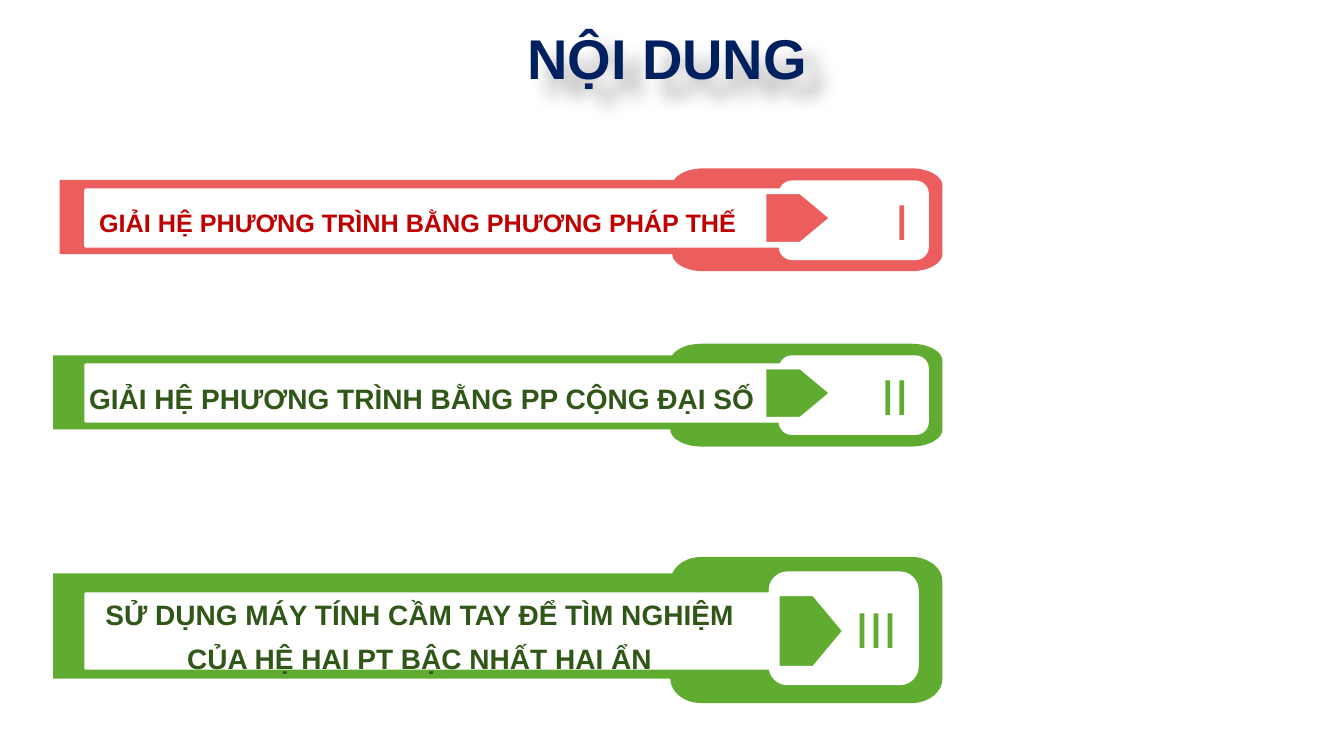
import itertools
from dataclasses import dataclass

import lxml.etree
import pptx
import pptx.dml.color
import pptx.enum.shapes
import pptx.enum.text
import pptx.oxml
import pptx.oxml.ns
import pptx.shapes.autoshape
import pptx.shapes.group
import pptx.slide
import pptx.text.text
import pptx.util

RGBColor = pptx.dml.color.RGBColor
Preset = pptx.enum.shapes.MSO_SHAPE
Align = pptx.enum.text.PP_ALIGN
Anchor = pptx.enum.text.MSO_ANCHOR
Point = tuple[float, float]

NAVY = RGBColor(0x00, 0x20, 0x60)
CORAL = RGBColor(0xEB, 0x5E, 0x5D)
CRIMSON = RGBColor(0xC0, 0x00, 0x00)
GREEN = RGBColor(0x60, 0xAC, 0x30)
FOREST = RGBColor(0x30, 0x56, 0x18)
WHITE = RGBColor(0xFF, 0xFF, 0xFF)

FONT = "Arial"
COLUMNS, ROWS = 160, 90
CELL = pptx.util.Inches(7.5) / ROWS

HEAD_RIGHT = 112.2
CORNER_WIDTH = 3.7
CURVE = 0.55
LABEL_LEFT = 10.2
BADGE_WIDTH = 17.88
ARROW_WIDTH, ARROW_TIP = 7.8, 3.6


@dataclass(frozen=True)
class Section:
    """One banner; lengths are grid columns and rows."""
    numeral: str
    heading: str
    size: int
    colour: RGBColor
    text_colour: RGBColor
    left: float
    head_left: float
    top: float
    height: float
    badge_left: float
    badge_height: float
    badge_shift: float
    label_width: float
    label_height: float
    label_shift: float
    arrow_left: float
    arrow_height: float


SECTIONS = (
    Section("I", "GIẢI HỆ PHƯƠNG TRÌNH BẰNG PHƯƠNG PHÁP THẾ", 18, CORAL, CRIMSON,
            7.1, 80.04, 20.04, 12.24, 92.7, 9.48, 0.06, 89.28, 6.72, -0.2, 91.08, 6.0),
    Section("II", "GIẢI HỆ PHƯƠNG TRÌNH BẰNG PP CỘNG ĐẠI SỐ", 20, GREEN, FOREST,
            6.32, 79.8, 40.92, 12.24, 92.7, 9.48, 0, 90.24, 6.72, -0.24, 91.08, 6.0),
    Section("III", "SỬ DỤNG MÁY TÍNH CẦM TAY ĐỂ TÌM NGHIỆM CỦA HỆ HAI PT BẬC NHẤT HAI ẨN",
            20, GREEN, FOREST,
            6.32, 79.8, 66.3, 17.4, 91.5, 13.56, -0.2, 90.24, 8.88, 0.12, 92.64, 8.64),
)


def cells(count: float) -> int:
    return round(count * CELL)


def write(frame: pptx.text.text.TextFrame, text: str, *, size: int, colour: RGBColor,
          bold: bool = False, align: Align = Align.CENTER, anchor: Anchor = Anchor.MIDDLE,
          right_inset: float | None = None, spacing: float = 1.0) -> None:
    """Fill a frame; giving right_inset (inches) clears the other insets."""
    frame.word_wrap = True
    frame.vertical_anchor = anchor
    if right_inset is not None:
        frame.margin_left = frame.margin_top = frame.margin_bottom = 0
        frame.margin_right = pptx.util.Inches(right_inset)
    paragraph = frame.paragraphs[0]
    paragraph.alignment = align
    paragraph.line_spacing = spacing
    run = paragraph.add_run()
    run.text = text
    run.font.name = FONT
    run.font.size = pptx.util.Pt(size)
    run.font.bold = bold
    run.font.color.rgb = colour


def paint(shape: pptx.shapes.autoshape.Shape, fill: RGBColor, outlined: bool = False) -> None:
    shape.shadow.inherit = False
    shape.fill.solid()
    shape.fill.fore_color.rgb = fill
    if outlined:
        shape.line.color.rgb = WHITE
        shape.line.width = pptx.util.Pt(2)
    else:
        shape.line.fill.background()


def add_centred(group: pptx.shapes.group.GroupShape, preset: Preset, left: float,
                middle: float, width: float, height: float) -> pptx.shapes.autoshape.Shape:
    """Add a preset whose vertical centre lies on the row `middle`."""
    return group.shapes.add_shape(preset, cells(left), cells(middle - height / 2),
                                  cells(width), cells(height))


def add_curved(group: pptx.shapes.group.GroupShape,
               segments: list[list[Point]]) -> pptx.shapes.autoshape.Shape:
    """Add a closed outline; one-point segments are lines, three-point ones Bézier curves."""
    points = [(cells(x), cells(y)) for x, y in itertools.chain(*segments)]
    builder = group.shapes.build_freeform(*points[0])
    builder.add_line_segments(points[1:], close=True)
    shape = builder.convert_to_shape()
    steps = iter(shape.element.findall(".//" + pptx.oxml.ns.qn("a:lnTo")))
    for segment in segments[1:]:
        first, *others = itertools.islice(steps, len(segment))
        if others:
            curve = lxml.etree.Element(pptx.oxml.ns.qn("a:cubicBezTo"))
            first.addprevious(curve)
            for step in (first, *others):
                curve.append(step[0])
                step.getparent().remove(step)
    return shape


def add_banner(group: pptx.shapes.group.GroupShape, section: Section) -> None:
    radius = section.height / 6
    top, bottom = section.top, section.top + section.height
    upper, lower = top + radius, bottom - radius
    bar_top = top + 0.113 * section.height
    left, right = section.head_left, HEAD_RIGHT
    near, far = left + CORNER_WIDTH, right - CORNER_WIDTH
    reach_x, reach_y = CORNER_WIDTH * CURVE, radius * CURVE
    banner = add_curved(group, [
        [(near, top)],
        [(far, top)],
        [(far + reach_x, top), (right, upper - reach_y), (right, upper)],
        [(right, lower)],
        [(right, lower + reach_y), (far + reach_x, bottom), (far, bottom)],
        [(near, bottom)],
        [(near - reach_x, bottom), (left, lower + reach_y), (left, lower)],
        [(section.left, lower)],
        [(section.left, bar_top)],
        [(near - 0.94 * CORNER_WIDTH, bar_top)],
        [(near - 0.81 * CORNER_WIDTH, upper - 0.7 * radius),
         (near - 0.45 * CORNER_WIDTH, top), (near, top)],
    ])
    paint(banner, section.colour)


def add_section(slide: pptx.slide.Slide, section: Section) -> None:
    group = slide.shapes.add_group_shape()
    middle = section.top + section.height / 2
    add_banner(group, section)

    badge = add_centred(group, Preset.ROUNDED_RECTANGLE, section.badge_left,
                        middle + section.badge_shift, BADGE_WIDTH, section.badge_height)
    paint(badge, WHITE)
    write(badge.text_frame, section.numeral, size=36, colour=section.colour,
          align=Align.RIGHT, right_inset=0.16)

    label_middle = middle + section.label_shift
    label = add_centred(group, Preset.PENTAGON, LABEL_LEFT, label_middle,
                        section.label_width, section.label_height)
    paint(label, WHITE, outlined=True)
    write(label.text_frame, section.heading, size=section.size, colour=section.text_colour,
          bold=True, right_inset=0.71, spacing=1.3)

    arrow = add_centred(group, Preset.PENTAGON, section.arrow_left, label_middle,
                        ARROW_WIDTH, section.arrow_height)
    arrow.adjustments[0] = ARROW_TIP / min(ARROW_WIDTH, section.arrow_height)
    paint(arrow, section.colour, outlined=True)


def add_title(slide: pptx.slide.Slide) -> None:
    title = slide.shapes.title
    title.left, title.top = cells(41.8), cells(2.16)
    title.width, title.height = cells(75.24), cells(9.24)
    title.text_frame.auto_size = pptx.enum.text.MSO_AUTO_SIZE.NONE
    write(title.text_frame, "NỘI DUNG", size=40, colour=NAVY, bold=True, anchor=Anchor.TOP)
    title.fill.background()
    effects = pptx.oxml.parse_xml(
        f'<a:effectLst {pptx.oxml.ns.nsdecls("a")}>'
        '<a:outerShdw blurRad="150000" dist="220000" dir="2700000" algn="tl" rotWithShape="0">'
        '<a:srgbClr val="000000"><a:alpha val="30000"/></a:srgbClr>'
        '</a:outerShdw></a:effectLst>')
    title.element.spPr.append(effects)


def main() -> None:
    deck = pptx.Presentation()
    deck.slide_width, deck.slide_height = cells(COLUMNS), cells(ROWS)
    slide = deck.slides.add_slide(deck.slide_layouts[5])
    add_title(slide)
    for section in SECTIONS:
        add_section(slide, section)
    deck.save("out.pptx")


if __name__ == "__main__":
    main()
